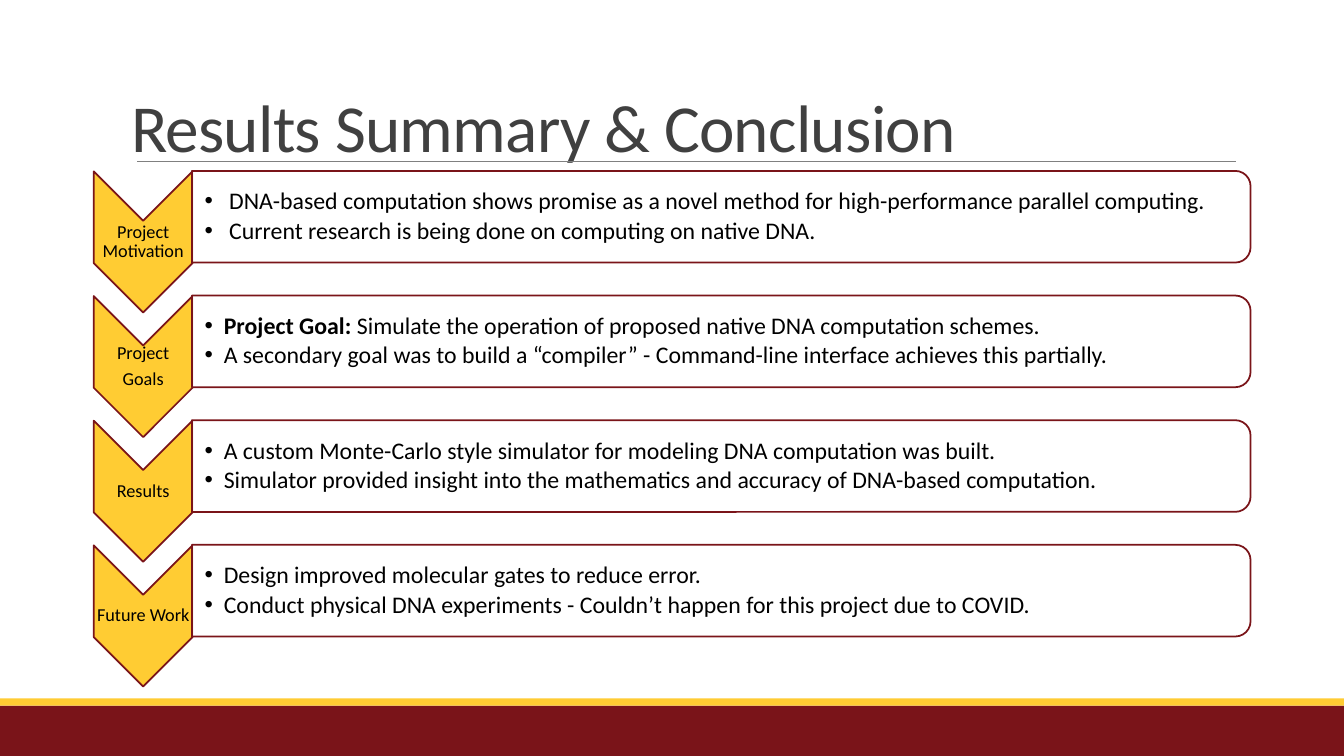
from dataclasses import dataclass

from lxml import etree
from pptx import Presentation
from pptx.dml.color import RGBColor
from pptx.enum.shapes import MSO_CONNECTOR, MSO_SHAPE
from pptx.enum.text import MSO_ANCHOR, MSO_AUTO_SIZE, PP_ALIGN
from pptx.oxml.ns import qn
from pptx.shapes.autoshape import Shape
from pptx.slide import Slide
from pptx.text.text import TextFrame
from pptx.util import Emu, Inches, Pt

RECT = MSO_SHAPE.RECTANGLE
CHEVRON = MSO_SHAPE.CHEVRON
CARD = MSO_SHAPE.ROUND_2_SAME_RECTANGLE
STRAIGHT = MSO_CONNECTOR.STRAIGHT
LEFT, CENTER = PP_ALIGN.LEFT, PP_ALIGN.CENTER
MIDDLE, BOTTOM = MSO_ANCHOR.MIDDLE, MSO_ANCHOR.BOTTOM
NO_FIT = MSO_AUTO_SIZE.NONE

MAROON = RGBColor(0x7A, 0x14, 0x19)
GOLD = RGBColor(0xFF, 0xCC, 0x33)
WHITE = RGBColor(0xFF, 0xFF, 0xFF)
BLACK = RGBColor(0, 0, 0)
DARK = RGBColor(0x40, 0x40, 0x40)
GRAY = RGBColor(0x80, 0x80, 0x80)

FONT = "Calibri"
COLS, ROWS = 160, 90
WIDTH, HEIGHT = Inches(13.33), Inches(7.5)
PITCH = 14.84


@dataclass(frozen=True)
class Box:
    col: float
    row: float
    wide: float
    high: float

    def down(self, rows: float) -> "Box":
        return Box(self.col, self.row + rows, self.wide, self.high)

    def turned(self) -> "Box":
        shift = (self.wide - self.high) / 2
        return Box(self.col + shift, self.row - shift, self.high, self.wide)

    def place(self) -> tuple[Emu, Emu, Emu, Emu]:
        return across(self.col), along(self.row), across(self.wide), along(self.high)


@dataclass(frozen=True)
class Topic:
    label: tuple[str, ...]
    points: tuple[str, ...]
    lead: str = ""


ARROW = Box(11.16, 20.4, 11.76, 16.8)
LABEL = Box(11.16, 26.28, 11.76, 5.04)
PANEL = Box(22.86, 20.34, 126, 10.92)
POINTS = Box(22.8, 20.88, 125.52, 9.84)
TITLE = Box(14.4, 1.32, 132, 19.08)
BANDS = ((Box(0, 84, COLS, 6), MAROON), (Box(0, 83.16, COLS, 0.84), GOLD))

TOPICS = (
    Topic(
        ("Project Motivation",),
        (
            " DNA-based computation shows promise as a novel method for high-performance parallel computing.",
            " Current research is being done on computing on native DNA.",
        ),
    ),
    Topic(
        ("Project", "Goals"),
        (
            "Simulate the operation of proposed native DNA computation schemes.",
            "A secondary goal was to build a “compiler” - Command-line interface achieves this partially.",
        ),
        "Project Goal: ",
    ),
    Topic(
        ("Results",),
        (
            "A custom Monte-Carlo style simulator for modeling DNA computation was built.",
            "Simulator provided insight into the mathematics and accuracy of DNA-based computation.",
        ),
    ),
    Topic(
        ("Future Work",),
        (
            "Design improved molecular gates to reduce error.",
            "Conduct physical DNA experiments - Couldn’t happen for this project due to COVID.",
        ),
    ),
)


def across(cols: float) -> Emu:
    return Emu(round(WIDTH * cols / COLS))


def along(rows: float) -> Emu:
    return Emu(round(HEIGHT * rows / ROWS))


def write(frame: TextFrame, lines: tuple[str, ...], *, size: float, color: RGBColor = BLACK,
          align: PP_ALIGN = LEFT, anchor: MSO_ANCHOR = MIDDLE, pitch: float = 0.9,
          after: float = 0, lead: str = "", bullet: bool = False, track: int = 0) -> None:
    frame.word_wrap = True
    frame.auto_size = NO_FIT
    frame.vertical_anchor = anchor
    for i, line in enumerate(lines):
        para = frame.add_paragraph() if i else frame.paragraphs[0]
        para.alignment = align
        para.line_spacing = pitch
        para.space_after = Pt(size * after)
        if bullet:
            para.level = 1
            props = para._p.get_or_add_pPr()
            props.set("marL", str(Inches(0.19)))
            props.set("indent", str(-Inches(0.19)))
            etree.SubElement(props, qn("a:buFont")).set("typeface", "Arial")
            etree.SubElement(props, qn("a:buChar")).set("char", "•")
        parts = ((lead, True), (line, False)) if lead and i == 0 else ((line, False),)
        for text, bold in parts:
            run = para.add_run()
            run.text = text
            run.font.name = FONT
            run.font.size = Pt(size)
            run.font.bold = bold
            run.font.color.rgb = color
            if track:
                run.font._element.set("spc", str(track))


def draw(slide: Slide, kind: MSO_SHAPE, box: Box, fill: RGBColor) -> Shape:
    shape = slide.shapes.add_shape(kind, *box.place())
    shape.shadow.inherit = False
    shape.fill.solid()
    shape.fill.fore_color.rgb = fill
    shape.line.fill.background()
    return shape


def turn(slide: Slide, kind: MSO_SHAPE, box: Box, fill: RGBColor) -> Shape:
    shape = draw(slide, kind, box.turned(), fill)
    shape.rotation = 90
    shape.line.color.rgb = MAROON
    shape.line.width = Pt(1.25)
    return shape


def frame_at(slide: Slide, box: Box, left: float = 0.01) -> TextFrame:
    frame = slide.shapes.add_textbox(*box.place()).text_frame
    frame.margin_left = Inches(left)
    frame.margin_top = frame.margin_right = frame.margin_bottom = Inches(0.01)
    return frame


def add_topic(slide: Slide, topic: Topic, drop: float) -> None:
    turn(slide, CHEVRON, ARROW.down(drop), GOLD)
    write(frame_at(slide, LABEL.down(drop)), topic.label, size=13, align=CENTER, after=0.35)
    panel = turn(slide, CARD, PANEL.down(drop), WHITE)
    tint = panel._element.spPr.find(qn("a:solidFill"))[0]
    etree.SubElement(tint, qn("a:alpha")).set("val", "90000")
    write(frame_at(slide, POINTS.down(drop), 0.13), topic.points, size=17, after=0.15,
          lead=topic.lead, bullet=True)


def add_rule(slide: Slide) -> None:
    row = along(19.2)
    rule = slide.shapes.add_connector(STRAIGHT, across(16.32), row, across(147.12), row)
    rule.line.color.rgb = GRAY
    rule.line.width = Pt(0.5)
    etree.SubElement(rule._element.spPr, qn("a:effectLst"))


def main() -> None:
    deck = Presentation()
    deck.slide_width, deck.slide_height = WIDTH, HEIGHT
    slide = deck.slides.add_slide(deck.slide_layouts[5])
    for box, fill in BANDS:
        draw(slide, RECT, box, fill)
    add_rule(slide)
    title = slide.shapes.title
    title.left, title.top, title.width, title.height = TITLE.place()
    write(title.text_frame, ("Results Summary & Conclusion",), size=48, color=DARK,
          anchor=BOTTOM, pitch=0.85, track=-50)
    for i, topic in enumerate(TOPICS):
        add_topic(slide, topic, i * PITCH)
    deck.save("out.pptx")


if __name__ == "__main__":
    main()
